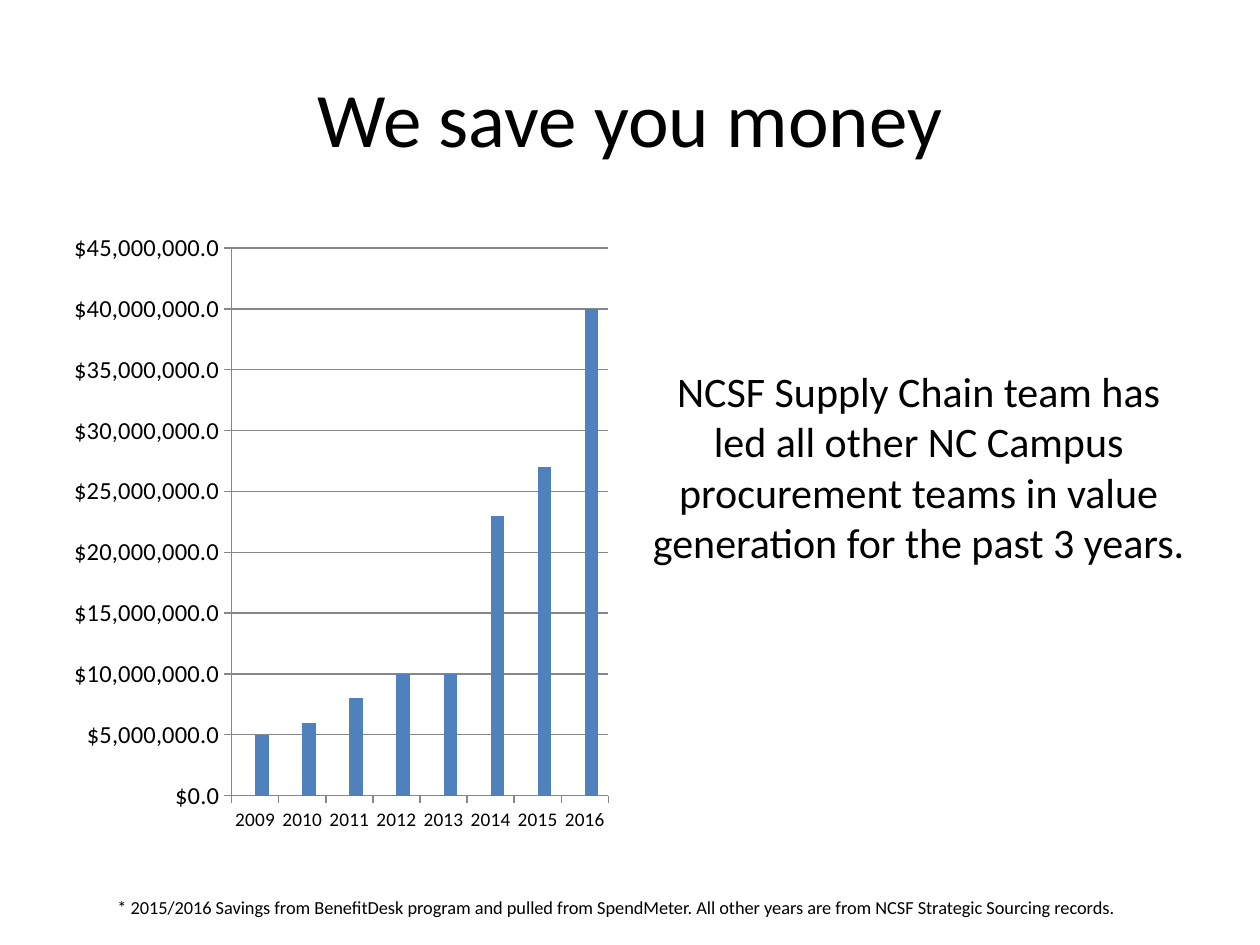
from pptx import Presentation
from pptx.chart.data import CategoryChartData
from pptx.dml.color import RGBColor
from pptx.enum.chart import XL_CHART_TYPE, XL_TICK_MARK
from pptx.enum.text import MSO_ANCHOR, PP_ALIGN
from pptx.util import Pt

COLUMN = XL_CHART_TYPE.COLUMN_CLUSTERED
OUT, NONE = XL_TICK_MARK.OUTSIDE, XL_TICK_MARK.NONE
LEFT, CENTER = PP_ALIGN.LEFT, PP_ALIGN.CENTER
TOP, MIDDLE = MSO_ANCHOR.TOP, MSO_ANCHOR.MIDDLE

TITLE = "We save you money"
CLAIM = ("NCSF Supply Chain team has led all other NC Campus procurement "
         "teams in value generation for the past 3 years.")
NOTE = ("* 2015/2016 Savings from BenefitDesk program and pulled from "
        "SpendMeter. All other years are from NCSF Strategic Sourcing records.")
YEARS = [str(year) for year in range(2009, 2017)]
MILLION = 1_000_000
SAVINGS = {
    "Series 1": [0],
    "Series 2": [n * MILLION for n in (5, 6, 8, 10, 10, 23, 27, 40)],
}

THEME = {
    "font": "Calibri",
    "ink": RGBColor(0, 0, 0),
    "bar": RGBColor(0x4F, 0x81, 0xBD),
    "grid": RGBColor(0x87, 0x87, 0x87),
    "title": Pt(44), "claim": Pt(24), "note": Pt(10.5),
    "years": Pt(11), "money": Pt(14),
}

WIDE, HIGH, EDGE, GAP = 720, 540, 36, 12
HALF = (WIDE - 2 * EDGE - GAP) / 2
TITLE_BOX = (EDGE, 21.6, WIDE - 2 * EDGE, 90)
CHART_BOX = (EDGE, 126, HALF, 356.4)
CLAIM_BOX = (EDGE + HALF + GAP, 205.2, HALF, 160)
NOTE_BOX = (60, 508.3, 612, 20)


def points(box):
    return [Pt(n) for n in box]


def style(font, size):
    font.name, font.size = THEME["font"], THEME[size]
    font.color.rgb = THEME["ink"]


def write(shape, text, size, align, anchor=TOP):
    frame = shape.text_frame
    frame.text = text
    frame.word_wrap = True
    frame.vertical_anchor = anchor
    para = frame.paragraphs[0]
    para.alignment = align
    style(para.runs[0].font, size)


def add_text(slide, box, *args):
    write(slide.shapes.add_textbox(*points(box)), *args)


def rule(line):
    line.color.rgb = THEME["grid"]
    line.width = Pt(0.75)


def add_savings(slide):
    data = CategoryChartData(number_format='"$"#,##0.0')
    data.categories = YEARS
    for name, values in SAVINGS.items():
        data.add_series(name, values)
    chart = slide.shapes.add_chart(COLUMN, *points(CHART_BOX), data).chart
    chart.has_legend = chart.has_title = False

    plot = chart.plots[0]
    plot.gap_width, plot.overlap = 150, 0
    plot.vary_by_categories = False
    for series in plot.series:
        series.format.fill.solid()
        series.format.fill.fore_color.rgb = THEME["bar"]

    money = chart.value_axis
    for axis, size in ((chart.category_axis, "years"), (money, "money")):
        axis.major_tick_mark, axis.minor_tick_mark = OUT, NONE
        style(axis.tick_labels.font, size)
        rule(axis.format.line)
    money.minimum_scale, money.maximum_scale = 0, 45 * MILLION
    money.major_unit = 5 * MILLION
    money.has_major_gridlines = True
    rule(money.major_gridlines.format.line)
    money.tick_labels.number_format = '"$"#,##0.0'
    money.tick_labels.number_format_is_linked = False


def main():
    deck = Presentation()
    deck.slide_width, deck.slide_height = Pt(WIDE), Pt(HIGH)
    slide = deck.slides.add_slide(deck.slide_layouts.get_by_name("Title Only"))
    title = slide.shapes.title
    title.left, title.top, title.width, title.height = points(TITLE_BOX)
    write(title, TITLE, "title", CENTER, MIDDLE)
    add_savings(slide)
    add_text(slide, CLAIM_BOX, CLAIM, "claim", CENTER)
    add_text(slide, NOTE_BOX, NOTE, "note", LEFT)
    deck.save("out.pptx")


if __name__ == "__main__":
    main()
